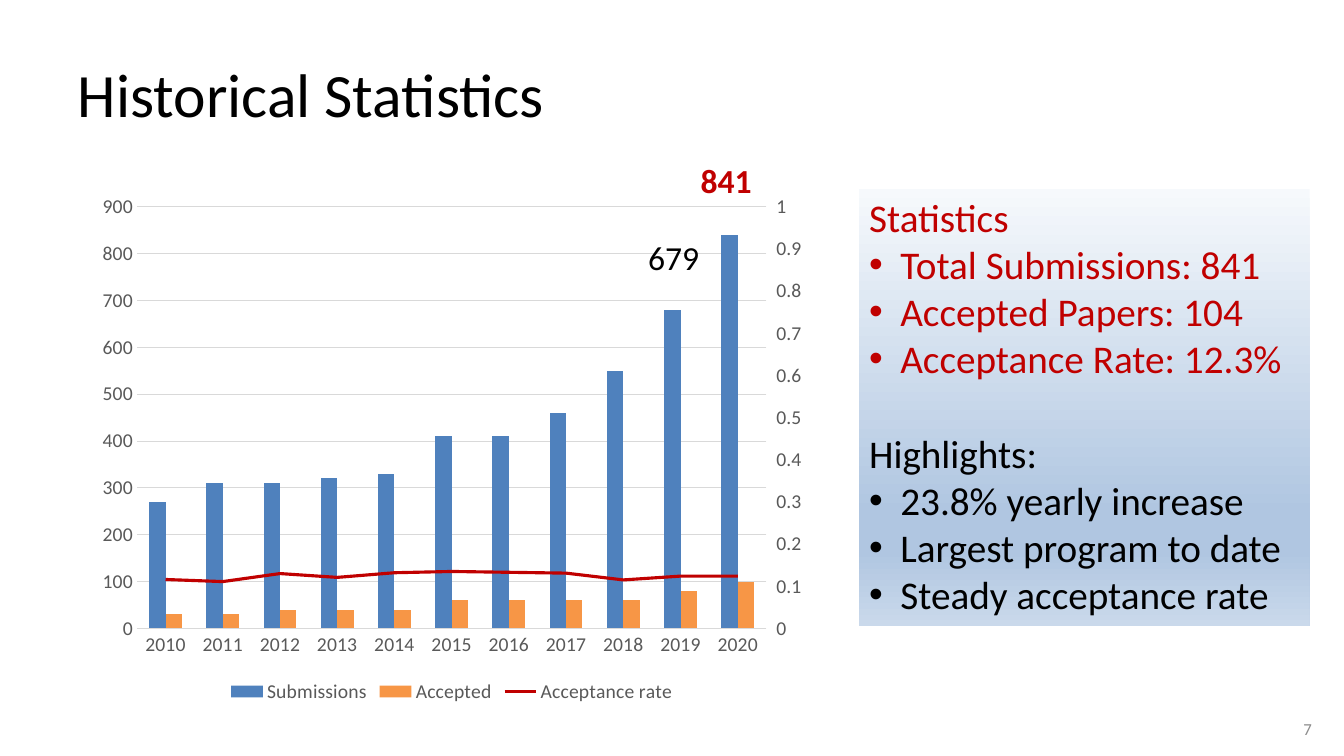
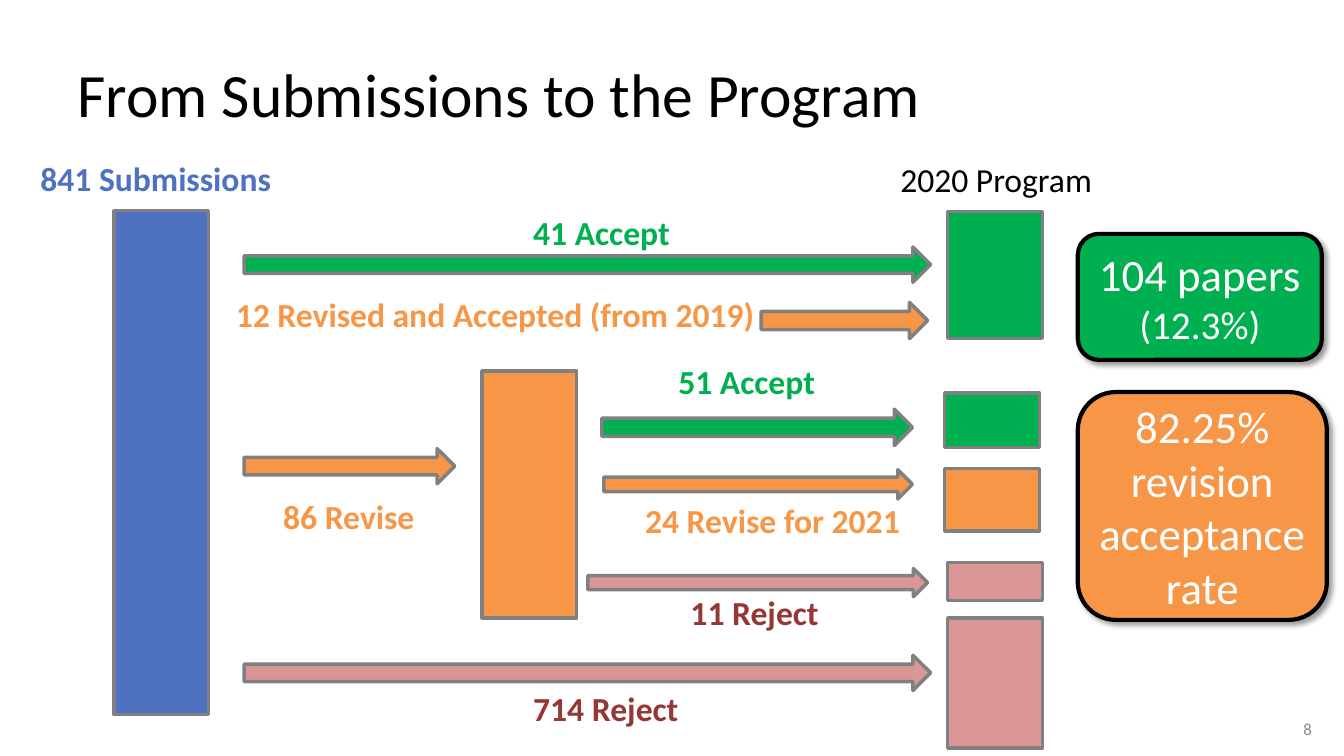
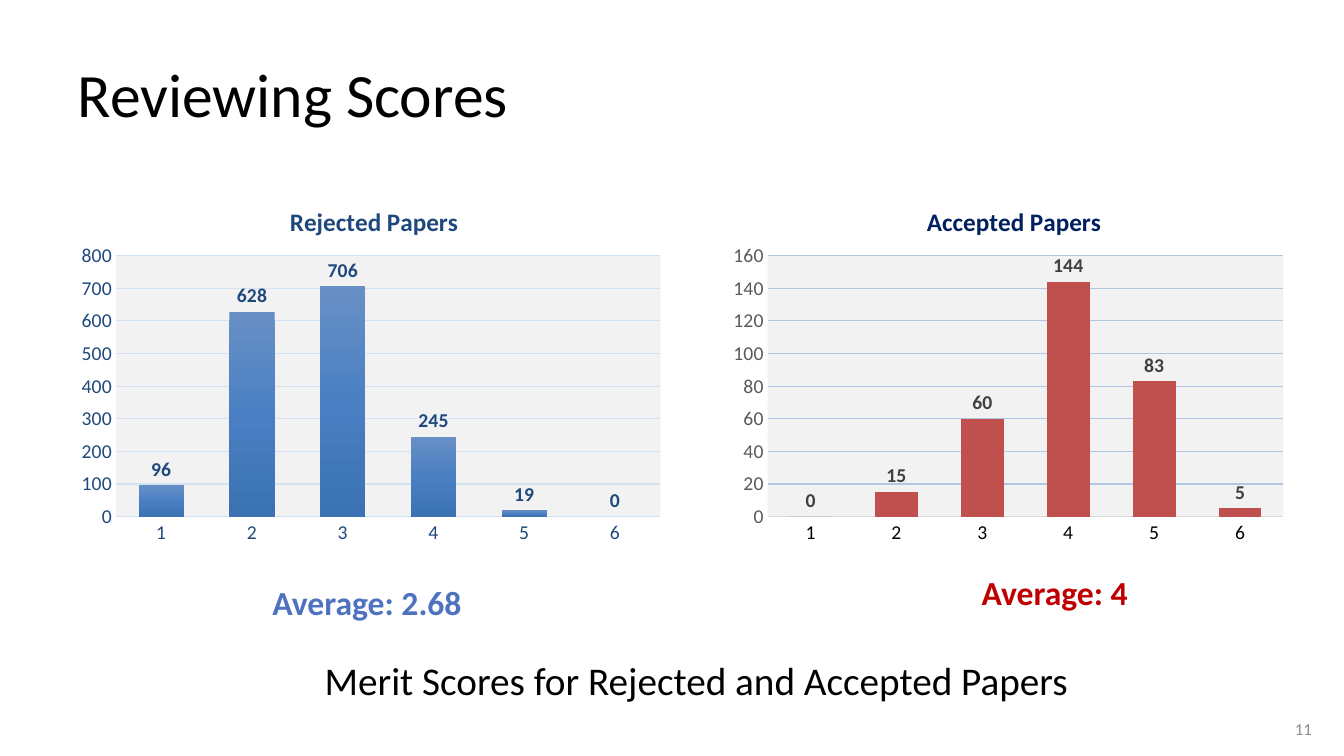
from copy import deepcopy
from pptx import Presentation
from pptx.chart.axis import ValueAxis
from pptx.chart.data import CategoryChartData as Data
from pptx.dml.color import RGBColor
from pptx.enum.chart import XL_CHART_TYPE as Kind, XL_LABEL_POSITION as Spot
from pptx.enum.chart import XL_LEGEND_POSITION as Side, XL_MARKER_STYLE as Mark
from pptx.enum.chart import XL_TICK_MARK as Tick
from pptx.enum.shapes import MSO_SHAPE as Form
from pptx.enum.text import MSO_ANCHOR as Anchor, MSO_AUTO_SIZE as Fit, PP_ALIGN as Align
from pptx.oxml import parse_xml
from pptx.oxml.ns import nsdecls, qn
from pptx.util import Pt

PX = 9144
FONT = "Calibri"
INK = {name: RGBColor.from_string(code) for name, code in {
    "black": "000000", "white": "FFFFFF", "grey": "595959", "pale": "8C8C8C",
    "edge": "808080", "grid": "D9D9D9", "dark": "404040", "red": "C00000",
    "bar": "4F81BD", "blue": "4E72BF", "navy": "002060", "deep": "1F497D",
    "mist": "D4E3F4", "sky": "B0C6E1", "orange": "F79646", "green": "00B050",
    "rose": "D99694", "wine": "953735", "brick": "C0504D"}.items()}


def text(owner, words, box=None, size=24, ink="black", bold=False, align=Align.LEFT,
         anchor=Anchor.TOP, wrap=True, gap=0, bullet=None):
    if box:
        owner = owner.shapes.add_textbox(*[n * PX for n in box])
    frame = owner.text_frame
    frame.word_wrap = wrap
    frame.auto_size = Fit.NONE
    frame.vertical_anchor = anchor
    para = frame.add_paragraph() if frame.text else frame.paragraphs[0]
    if bullet is not None:
        props = para._p.get_or_add_pPr()
        props.set("marL", str(31 * PX if bullet else 0))
        props.set("indent", str(-31 * PX if bullet else 0))
        mark = 'buChar %s char="•"' if bullet else "buNone %s"
        props.append(parse_xml(f"<a:{mark % nsdecls('a')}/>"))
    para.space_before = Pt(gap)
    para.alignment = align
    run = para.add_run()
    run.text = words
    run.font.name, run.font.size, run.font.bold = FONT, Pt(size), bold
    run.font.color.rgb = INK[ink]


def plot(slide, box, cats, rows, top, gap, lap, inks, lines, inner):
    data = Data()
    data.categories = cats
    for name, vals in rows:
        data.add_series(name, vals)
    chart = slide.shapes.add_chart(Kind.COLUMN_CLUSTERED, *[n * PX for n in box], data).chart
    chart.font.name, chart.font.size = FONT, Pt(10)
    chart.has_title = chart.has_legend = False
    bars = chart.plots[0]
    bars.gap_width, bars.overlap, bars.vary_by_categories = gap, lap, False
    for axis, ink in zip((chart.category_axis, chart.value_axis), inks):
        axis.major_tick_mark = axis.minor_tick_mark = Tick.NONE
        font = axis.tick_labels.font
        font.name, font.size, font.color.rgb = FONT, Pt(14), INK[ink]
    axis.minimum_scale, axis.maximum_scale = 0, top
    axis.format.line.fill.background()
    axis.has_major_gridlines = True
    for rule, ink in zip((chart.category_axis, axis.major_gridlines), lines):
        rule.format.line.color.rgb, rule.format.line.width = INK[ink], Pt(0.75)
    area = chart.element.find(".//" + qn("c:plotArea"))
    for old in area.findall(qn("c:layout")):
        area.remove(old)
    spots = "".join(f'<c:{k} val="{v}"/>' for k, v in zip("xywh", inner))
    area.insert(0, parse_xml(
        f'<c:layout {nsdecls("c")}><c:manualLayout><c:layoutTarget val="inner"/>'
        f'<c:xMode val="edge"/><c:yMode val="edge"/>{spots}</c:manualLayout></c:layout>'))
    return chart, area


deck = Presentation()
deck.slide_width, deck.slide_height = 1333 * PX, 750 * PX
slides = []
for name, page, kind in (("Historical Statistics", 7, 1),
                         ("From Submissions to the Program", 8, 5),
                         ("Reviewing Scores", 11, 5)):
    slide = deck.slides.add_slide(deck.slide_layouts[kind])
    title = slide.shapes.title
    title.left, title.top, title.width, title.height = [n * PX for n in (67, 30, 1200, 125)]
    text(title, name, size=44, anchor=Anchor.MIDDLE)
    text(slide, str(page), (1000, 703, 311, 40), size=12, ink="pale",
         align=Align.RIGHT, anchor=Anchor.MIDDLE)
    slides.append(slide)
stats, flow, scores = slides
grads = []

years = [str(year) for year in range(2010, 2021)]
chart, area = plot(stats, (85, 179, 726, 523), years, [
    ("Submissions", (270, 310, 310, 320, 330, 410, 410, 460, 550, 680, 840)),
    ("Accepted", (30, 30, 40, 40, 40, 60, 60, 60, 60, 80, 100)),
    ("Acceptance rate", (0.116, 0.111, 0.13, 0.121, 0.132, 0.135, 0.133, 0.131,
                         0.115, 0.124, 0.124))],
    900, 150, 0, ("grey", "grey"), ("grid", "grid"), (0.07, 0.05, 0.86, 0.8))
bars = area.find(qn("c:barChart"))
rate = bars.findall(qn("c:ser"))[2]
bars.remove(rate)
for flag in rate.findall(qn("c:invertIfNegative")):
    rate.remove(flag)
line = parse_xml(
    f'<c:lineChart {nsdecls("c")}><c:grouping val="standard"/><c:varyColors val="0"/>'
    '<c:marker val="1"/><c:axId val="501"/><c:axId val="502"/></c:lineChart>')
line.insert(2, rate)
bars.addnext(line)
base = parse_xml(
    f'<c:catAx {nsdecls("c")}><c:axId val="501"/><c:scaling><c:orientation val="minMax"/>'
    '</c:scaling><c:delete val="1"/><c:axPos val="b"/><c:crossAx val="502"/></c:catAx>')
right = parse_xml(
    f'<c:valAx {nsdecls("c")}><c:axId val="502"/><c:scaling><c:orientation val="minMax"/>'
    '<c:max val="1"/><c:min val="0"/></c:scaling><c:delete val="0"/><c:axPos val="r"/>'
    '<c:numFmt formatCode="General" sourceLinked="0"/><c:majorTickMark val="out"/>'
    '<c:minorTickMark val="none"/><c:tickLblPos val="nextTo"/><c:crossAx val="501"/>'
    '<c:crosses val="max"/><c:majorUnit val="0.1"/></c:valAx>')
last = area.findall(qn("c:valAx"))[-1]
last.addnext(base)
base.addnext(right)
axis = ValueAxis(right)
axis.format.line.fill.background()
chart.has_legend = True
chart.legend.position, chart.legend.include_in_layout = Side.BOTTOM, False
for font in (axis.tick_labels.font, chart.legend.font):
    font.name, font.size, font.color.rgb = FONT, Pt(14), INK["grey"]
for row, ink in zip(chart.plots[0].series, ("bar", "orange")):
    row.format.fill.solid()
    row.format.fill.fore_color.rgb = INK[ink]
trend = chart.plots[1].series[0]
trend.smooth, trend.marker.style = False, Mark.NONE
trend.format.line.color.rgb, trend.format.line.width = INK["red"], Pt(2.25)

panel = stats.placeholders[1]
panel.left, panel.top, panel.width, panel.height = [n * PX for n in (852, 187, 447, 434)]
grads.append((panel.fill, panel.element,
              ((0, "F6F9FC"), (0.74, "B0C6E1"), (0.83, "B0C6E1"), (1, "CAD9EB"))))
for head, items, ink, gap in (
        ("Statistics", ("Total Submissions: 841", "Accepted Papers: 104",
                        "Acceptance Rate: 12.3%"), "red", 0),
        ("Highlights:", ("23.8% yearly increase", "Largest program to date",
                         "Steady acceptance rate"), "black", 34)):
    text(panel, head, size=28, ink=ink, gap=gap, bullet=False)
    for item in items:
        text(panel, item, size=28, ink=ink, bullet=True)
text(stats, "841", (685, 154, 95, 50), ink="red", bold=True)
text(stats, "679", (633, 230, 95, 50))

for form, ink, *box in (
        (Form.RECTANGLE, "blue", 113, 209, 94, 500),
        (Form.RECTANGLE, "green", 940, 210, 94, 126),
        (Form.RECTANGLE, "orange", 478, 368, 94, 245),
        (Form.RECTANGLE, "rose", 940, 613, 94, 129),
        (Form.RECTANGLE, "green", 937, 390, 94, 54),
        (Form.RECTANGLE, "orange", 937, 465, 94, 62),
        (Form.RECTANGLE, "rose", 940, 558, 94, 38),
        (Form.RIGHT_ARROW, "green", 242, 245, 681, 35),
        (Form.RIGHT_ARROW, "orange", 242, 445, 209, 35),
        (Form.RIGHT_ARROW, "rose", 242, 650, 681, 35),
        (Form.RIGHT_ARROW, "orange", 755, 300, 165, 36),
        (Form.RIGHT_ARROW, "green", 597, 406, 308, 36),
        (Form.RIGHT_ARROW, "orange", 599, 466, 306, 29),
        (Form.RIGHT_ARROW, "rose", 583, 564, 337, 28),
        (Form.ROUNDED_RECTANGLE, "green", 1069, 232, 242, 125),
        (Form.ROUNDED_RECTANGLE, "orange", 1069, 389, 247, 226)):
    shape = flow.shapes.add_shape(form, *[n * PX for n in box])
    shape.shadow.inherit = False
    shape.fill.solid()
    shape.fill.fore_color.rgb = INK[ink]
    card = form == Form.ROUNDED_RECTANGLE
    shape.line.color.rgb = INK["black" if card else "edge"]
    shape.line.width = Pt(3 if card else 2.5)
    if card:
        shape.element.spPr.find(qn("a:effectLst")).append(parse_xml(
            f'<a:outerShdw {nsdecls("a")} blurRad="50800" dist="38100" dir="2700000">'
            '<a:srgbClr val="000000"><a:alpha val="40000"/></a:srgbClr></a:outerShdw>'))
        lines = ((("104 papers", 32), ("(12.3%)", 28)) if ink == "green"
                 else (("82.25% revision acceptance rate", 32),))
        for words, size in lines:
            text(shape, words, size=size, ink="white", align=Align.CENTER,
                 anchor=Anchor.MIDDLE)

for words, ink, *box in (
        ("841 Submissions", "blue", 29, 152, 251, 50),
        ("41 Accept", "green", 519, 205, 157, 50),
        ("86 Revise", "orange", 271, 487, 152, 50),
        ("714 Reject", "wine", 519, 678, 166, 50),
        ("2020 Program", "black", 882, 153, 212, 50),
        ("12 Revised and Accepted (from 2019)", "orange", 224, 287, 539, 50),
        ("51 Accept", "green", 663, 353, 157, 50),
        ("11 Reject", "wine", 675, 582, 149, 50),
        ("24 Revise for 2021", "orange", 630, 491, 275, 50)):
    text(flow, words, box, ink=ink, bold=ink != "black", wrap=False,
         align=Align.CENTER if box[1] < 160 else Align.LEFT)

for name, box, vals, top, gap, lap, inks, lines, head, tag, left in (
        ("Accepted Papers", (716, 176, 568, 370), (0, 15, 60, 144, 83, 5), 160, 101, -27,
         ("black", "grey"), ("grid", "sky"), "navy", "dark", 0.35),
        ("Rejected Papers", (67, 176, 600, 370), (96, 628, 706, 245, 19, 0), 800, 100, -24,
         ("deep", "deep"), ("mist", "mist"), "deep", "deep", 0.36)):
    chart, area = plot(scores, box, [str(n) for n in range(1, 7)], [("Series 1", vals)],
                       top, gap, lap, inks, lines, (0.08, 0.21, 0.9, 0.7))
    area.append(parse_xml(
        f'<c:spPr {nsdecls("c", "a")}><a:solidFill><a:srgbClr val="F2F2F2"/>'
        '</a:solidFill></c:spPr>'))
    chart.has_title = True
    para = chart.chart_title.text_frame.paragraphs[0]
    run = para.add_run()
    run.text = name
    bars = chart.plots[0]
    bars.has_data_labels = True
    marks = bars.data_labels
    marks.show_value, marks.position = True, Spot.OUTSIDE_END
    for font, size, ink in ((run.font, 18, head), (marks.font, 14, tag)):
        font.name, font.size, font.bold = FONT, Pt(size), True
        font.color.rgb = INK[ink]
    title = chart.element.find(".//" + qn("c:title"))
    for old in title.findall(qn("c:layout")):
        title.remove(old)
    title.insert(1, parse_xml(
        f'<c:layout {nsdecls("c")}><c:manualLayout><c:xMode val="edge"/>'
        f'<c:yMode val="edge"/><c:x val="{left}"/><c:y val="0.06"/>'
        '</c:manualLayout></c:layout>'))
    fill = bars.series[0].format.fill
    if name == "Accepted Papers":
        fill.solid()
        fill.fore_color.rgb = INK["brick"]
    else:
        grads.append((fill, chart.element, ((0, "688FC5"), (0.5, "4A80C3"), (1, "3B72B3"))))

for words, box, size, ink in (
        ("Merit Scores for Rejected and Accepted Papers", (285, 646, 811, 57), 28, "black"),
        ("Average: 2.68", (245, 572, 238, 50), 24, "blue"),
        ("Average: 4", (927, 562, 238, 50), 24, "red")):
    text(scores, words, box, size=size, ink=ink, bold=size == 24, align=Align.CENTER)

for fill, root, stops in grads:
    fill.gradient()
    fill.gradient_angle = 270
    ramp = next(root.iter(qn("a:gsLst")))
    for _ in stops[2:]:
        ramp.append(deepcopy(ramp[0]))
    for stop, (spot, code) in zip(fill.gradient_stops, stops):
        stop.position = spot
        stop.color.rgb = RGBColor.from_string(code)

deck.save("out.pptx")
